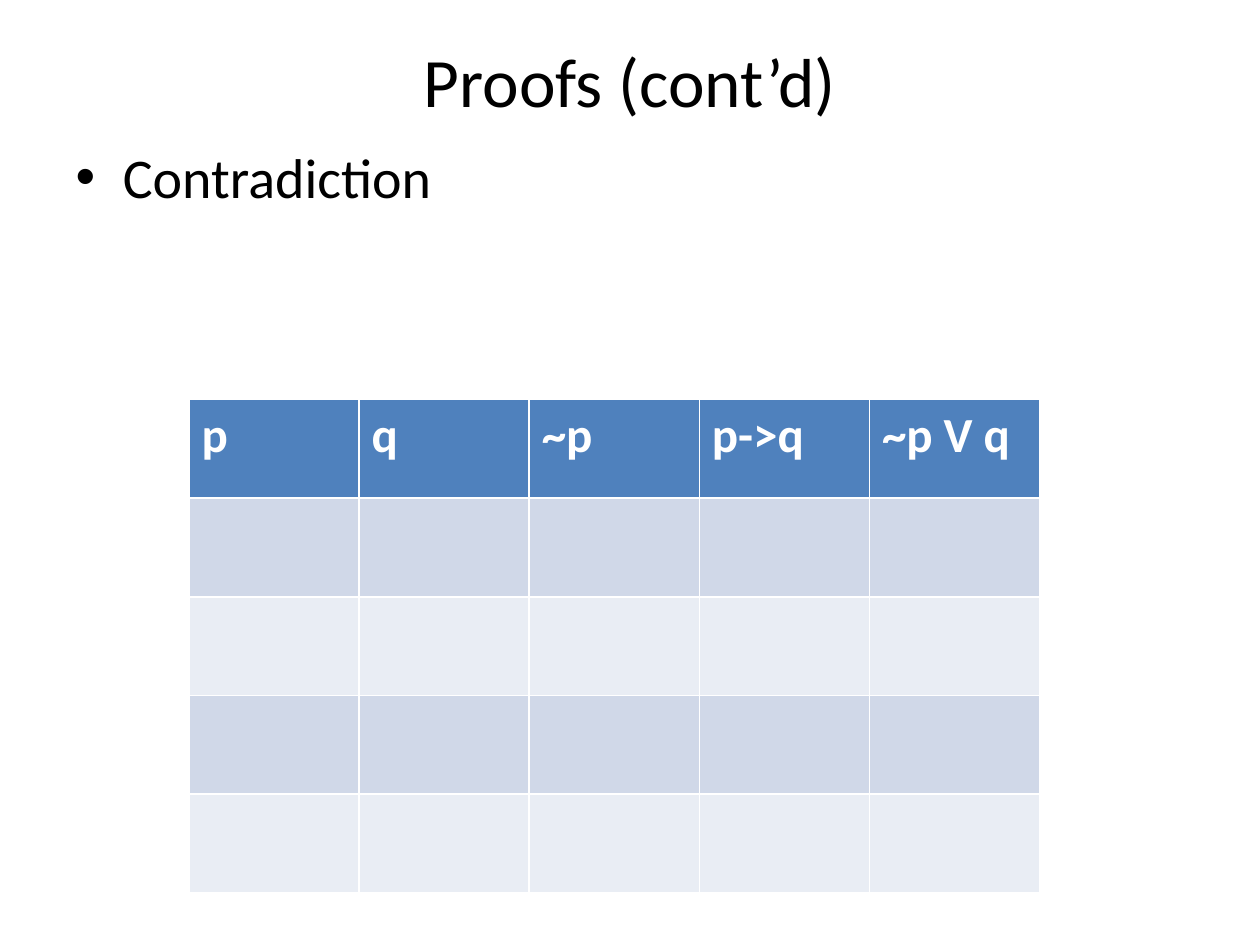
from pptx import Presentation
from pptx.dml.color import RGBColor
from pptx.enum.text import MSO_ANCHOR, MSO_AUTO_SIZE, PP_ALIGN
from pptx.util import Pt

TOP, CENTER, NO_FIT = MSO_ANCHOR.TOP, PP_ALIGN.CENTER, MSO_AUTO_SIZE.NONE

BLACK = RGBColor(0x00, 0x00, 0x00)
WHITE = RGBColor(0xFF, 0xFF, 0xFF)
HEADER_BLUE = RGBColor(0x4F, 0x81, 0xBD)
BANDS = [RGBColor(0xD0, 0xD8, 0xE8), RGBColor(0xE9, 0xED, 0xF4)]

TITLE = "Proofs (cont’d)"
BULLET = "Contradiction"
HEADERS = ["p", "q", "~p", "p->q", "~p V q"]
BLANK_ROWS = 4

TITLE_BOX = (36, 21.6, 648, 90)
BODY_BOX = (36, 77.76, 648, 426.24)
TABLE_LEFT, TABLE_TOP = 108, 228.24
COLUMN_WIDTH, ROW_HEIGHT = 97.2, 56.4


def write(text_frame, text, size, color=BLACK, bold=False, align=None):
    text_frame.text = text
    paragraph = text_frame.paragraphs[0]
    paragraph.alignment = align
    font = paragraph.runs[0].font
    font.name, font.size, font.bold = "Calibri", Pt(size), bold
    font.color.rgb = color


def place(shape, box):
    shape.left, shape.top, shape.width, shape.height = map(Pt, box)
    shape.text_frame.auto_size = NO_FIT
    shape.text_frame.vertical_anchor = TOP


def add_truth_table(slide):
    row_count, column_count = BLANK_ROWS + 1, len(HEADERS)
    table = slide.shapes.add_table(
        row_count, column_count, Pt(TABLE_LEFT), Pt(TABLE_TOP),
        Pt(COLUMN_WIDTH * column_count), Pt(ROW_HEIGHT * row_count)).table
    for row_index, row in enumerate(table.rows):
        fill_color = BANDS[(row_index - 1) % 2] if row_index else HEADER_BLUE
        for cell in row.cells:
            cell.fill.solid()
            cell.fill.fore_color.rgb = fill_color
    for cell, header in zip(table.rows[0].cells, HEADERS):
        write(cell.text_frame, header, 28, color=WHITE, bold=True)


def main():
    presentation = Presentation()
    presentation.slide_width, presentation.slide_height = Pt(720), Pt(540)
    slide = presentation.slides.add_slide(presentation.slide_layouts[1])

    title, body = slide.placeholders
    place(title, TITLE_BOX)
    title.text_frame.margin_top = Pt(0)
    write(title.text_frame, TITLE, 39.6, align=CENTER)
    place(body, BODY_BOX)
    write(body.text_frame, BULLET, 32)

    add_truth_table(slide)
    presentation.save("out.pptx")


if __name__ == "__main__":
    main()
